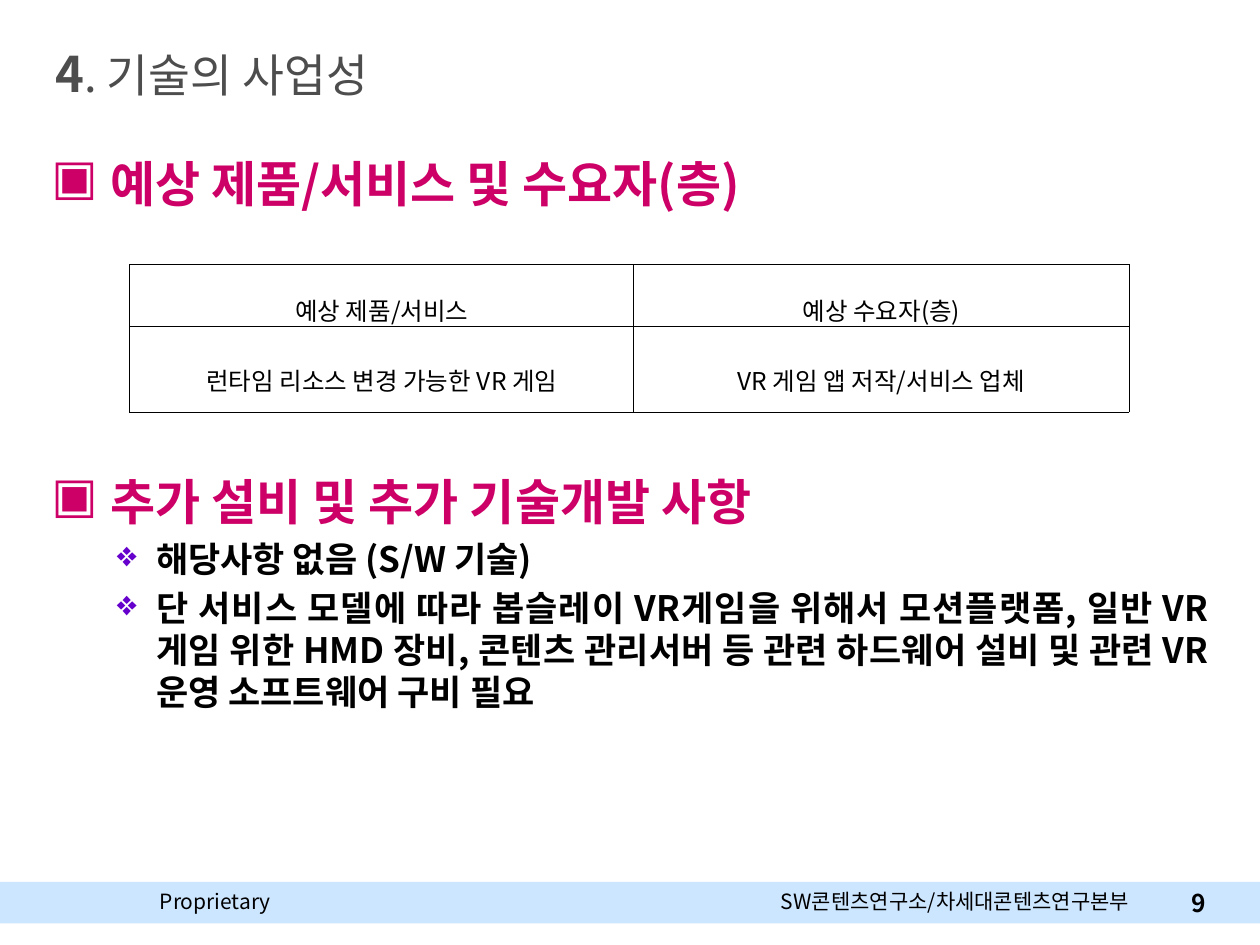
"""Build the slide on the business potential of the technology."""
from lxml.etree import SubElement
from pptx import Presentation
from pptx.dml.color import RGBColor
from pptx.enum.shapes import MSO_SHAPE as Shape
from pptx.enum.text import MSO_ANCHOR as Anchor, PP_ALIGN as Align
from pptx.oxml.ns import qn
from pptx.util import Inches, Pt

FONT = "Noto Sans CJK KR"
PINK, PURPLE, BLACK, GREY = "CC0066", "6600CC", "000000", "4D4D4D"


def color(value):
    return RGBColor.from_string(value)


def add_run(paragraph, text, size, ink=BLACK, bold=False):
    run = paragraph.add_run()
    run.text = text
    run.font.name = FONT
    run.font.size = Pt(size)
    run.font.bold = bold
    run.font.color.rgb = color(ink)
    SubElement(run.font._element, qn("a:ea"), typeface=FONT)


prs = Presentation()
prs.slide_width, prs.slide_height = Inches(10), Inches(7.5)
slide = prs.slides.add_slide(prs.slide_layouts[6])

footer_band = slide.shapes.add_shape(Shape.RECTANGLE, 0, Inches(7), Inches(10), Inches(0.33))
footer_band.shadow.inherit = False
footer_band.fill.solid()
footer_band.fill.fore_color.rgb = color("CDE6FF")
footer_band.line.fill.background()

labels = [
    ((1.17, 7, 1.33, 0.3), Anchor.TOP, Align.LEFT, [("Proprietary", 12, BLACK, False)]),
    ((5.94, 7, 3.28, 0.3), Anchor.TOP, Align.CENTER,
     [("SW콘텐츠연구소/차세대콘텐츠연구본부", 12, BLACK, False)]),
    ((9.19, 7, 0.48, 0.33), Anchor.MIDDLE, Align.RIGHT, [("9", 14, BLACK, True)]),
    ((0.34, 0.29, 7.83, 0.57), Anchor.MIDDLE, Align.LEFT,
     [("4", 28, GREY, True), (". 기술의 사업성", 26, GREY, False)]),
]
for place, anchor, align, parts in labels:
    frame = slide.shapes.add_textbox(*map(Inches, place)).text_frame
    frame.word_wrap = True
    frame.vertical_anchor = anchor
    frame.paragraphs[0].alignment = align
    for part in parts:
        add_run(frame.paragraphs[0], *part)

heading_style = ("▣", PINK, 0.38, 0.38, 28, PINK)
item_style = ("❖", PURPLE, 0.83, 0.31, 20, BLACK)
sections = [
    (1.17, 0.7, [(" 예상 제품/서비스 및 수요자(층)", heading_style)]),
    (3.69, 2.68, [
        (" 추가 설비 및 추가 기술개발 사항", heading_style),
        ("해당사항 없음 (S/W 기술)", item_style),
        ("단 서비스 모델에 따라 봅슬레이 VR게임을 위해서 모션플랫폼, 일반 VR 게임 위한 HMD 장비, "
         "콘텐츠 관리서버 등 관련 하드웨어 설비 및 관련 VR 운영 소프트웨어 구비 필요", item_style),
    ]),
]
for top, height, lines in sections:
    frame = slide.shapes.add_textbox(Inches(0.31), Inches(top), Inches(9.38), Inches(height)).text_frame
    frame.word_wrap = True
    for index, (text, style) in enumerate(lines):
        mark, mark_ink, margin, hanging, size, ink = style
        paragraph = frame.add_paragraph() if index else frame.paragraphs[0]
        props = paragraph._p.get_or_add_pPr()
        props.set("marL", str(Inches(margin)))
        props.set("indent", str(-Inches(hanging)))
        SubElement(SubElement(props, qn("a:buClr")), qn("a:srgbClr"), val=mark_ink)
        SubElement(props, qn("a:buChar"), char=mark)
        paragraph.alignment = Align.JUSTIFY
        if index:
            paragraph.space_before = Pt(size * 0.2)
        add_run(paragraph, text, size, ink, True)

market_rows = [
    ("예상 제품/서비스", "예상 수요자(층)"),
    ("런타임 리소스 변경 가능한 VR 게임", "VR 게임 앱 저작/서비스 업체"),
]
market = slide.shapes.add_table(2, 2, Inches(1.03), Inches(2.1), Inches(7.93), Inches(1.17)).table
market.first_row = market.horz_banding = False
for column, width in zip(market.columns, (4, 3.93)):
    column.width = Inches(width)
for row, height, texts in zip(market.rows, (0.49, 0.68), market_rows):
    row.height = Inches(height)
    for cell, text in zip(row.cells, texts):
        cell.vertical_anchor = Anchor.MIDDLE
        cell.margin_left = cell.margin_right = Inches(0.1)
        cell.margin_top = cell.margin_bottom = Inches(0.05)
        for side in ("a:lnL", "a:lnR", "a:lnT", "a:lnB"):
            border = SubElement(cell._tc.get_or_add_tcPr(), qn(side), w=str(Pt(0.56)))
            SubElement(SubElement(border, qn("a:solidFill")), qn("a:srgbClr"), val=BLACK)
        cell.fill.background()
        paragraph = cell.text_frame.paragraphs[0]
        paragraph.alignment = Align.CENTER
        paragraph.line_spacing = 1.6
        add_run(paragraph, text, 14)

prs.save("out.pptx")
